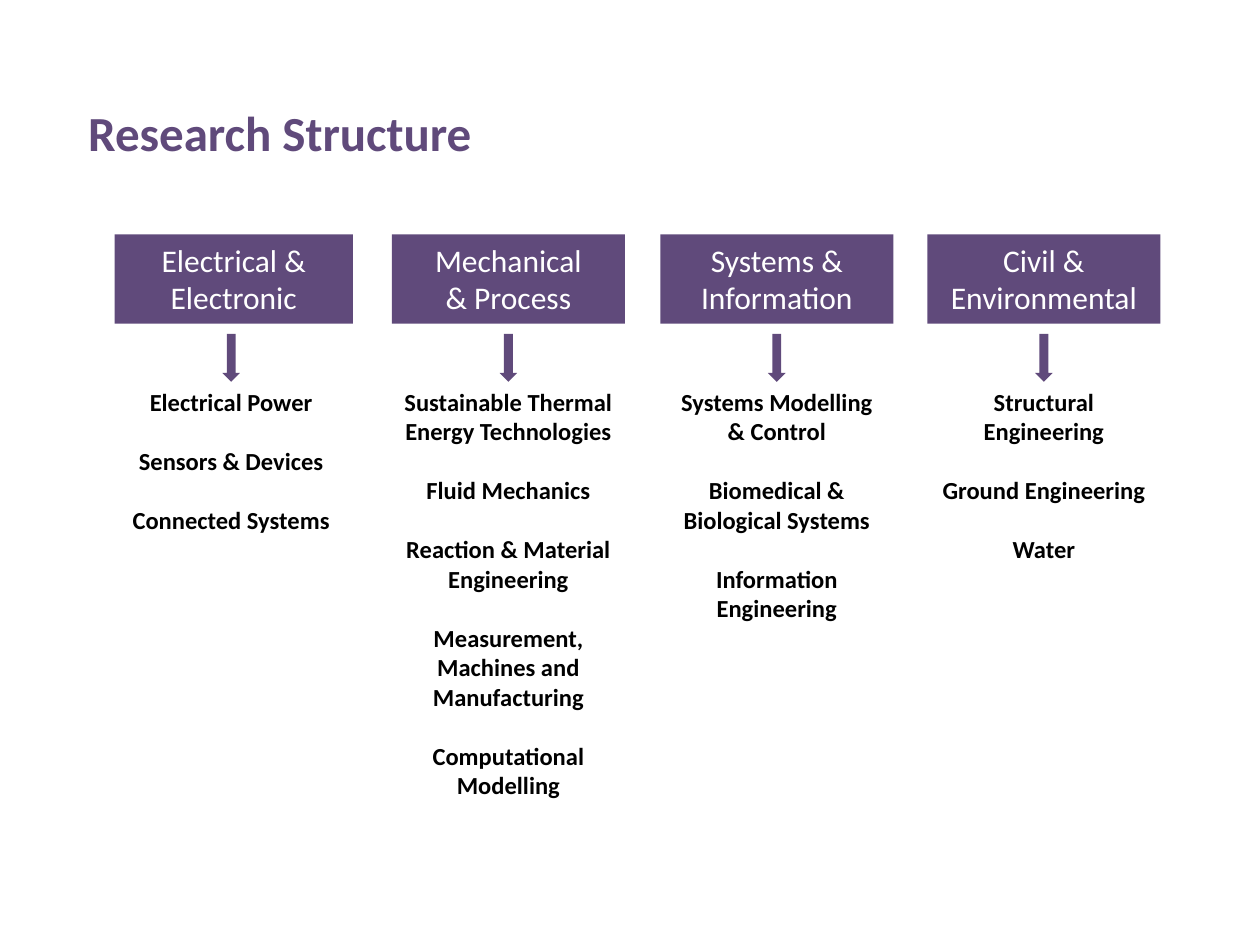
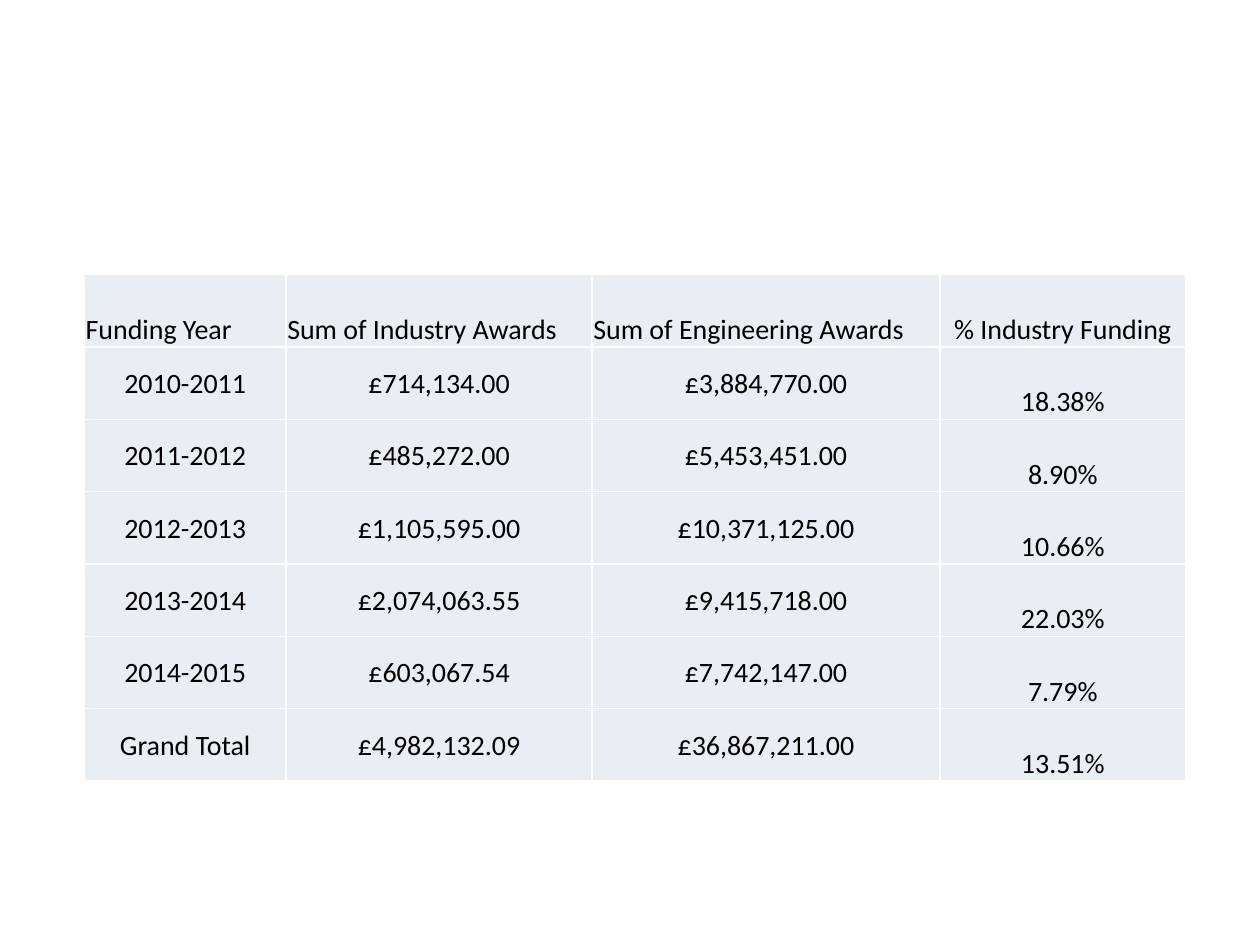
from lxml.etree import SubElement
from pptx import Presentation
from pptx.dml.color import RGBColor
from pptx.enum.shapes import MSO_SHAPE as Shape
from pptx.enum.text import MSO_ANCHOR as Anchor, MSO_AUTO_SIZE as AutoSize, PP_ALIGN as Align
from pptx.oxml.ns import qn
from pptx.util import Inches, Pt

FONT = "Calibri"
PURPLE, WHITE, BLACK, PALE = "604A7B", "FFFFFF", "000000", "E9EDF4"
TITLE_ONLY, BLANK = 5, 6

LIST_WIDTH = 1.85
ARROW_WIDTH = 0.14

# left, header width, header lines, topics
THEMES = [
    (0.91, 1.89, ["Electrical &", "Electronic"],
     ["Electrical Power", "Sensors & Devices", "Connected Systems"]),
    (3.11, 1.85, ["Mechanical", "& Process"],
     ["Sustainable Thermal Energy Technologies", "Fluid Mechanics",
      "Reaction & Material Engineering",
      "Measurement, Machines and Manufacturing", "Computational Modelling"]),
    (5.24, 1.85, ["Systems & Information"],
     ["Systems Modelling & Control", "Biomedical & Biological Systems",
      "Information Engineering"]),
    (7.36, 1.85, ["Civil & Environmental"],
     ["Structural Engineering", "Ground Engineering", "Water"]),
]

FUNDING = [
    ("Funding Year", "Sum of Industry Awards", "Sum of Engineering Awards", "% Industry Funding"),
    ("2010-2011", "£714,134.00", "£3,884,770.00", "18.38%"),
    ("2011-2012", "£485,272.00", "£5,453,451.00", "8.90%"),
    ("2012-2013", "£1,105,595.00", "£10,371,125.00", "10.66%"),
    ("2013-2014", "£2,074,063.55", "£9,415,718.00", "22.03%"),
    ("2014-2015", "£603,067.54", "£7,742,147.00", "7.79%"),
    ("Grand Total", "£4,982,132.09", "£36,867,211.00", "13.51%"),
]
FUNDING_WIDTHS = [1.6, 2.43, 2.76, 1.95]


def color(value):
    return RGBColor.from_string(value)


def inches(*lengths):
    return [Inches(length) for length in lengths]


def write(frame, lines, size, ink, bold=False, align=Align.CENTER, gap=0):
    """Write one paragraph per line, with gap points between paragraphs."""
    for index, line in enumerate(lines):
        para = frame.add_paragraph() if index else frame.paragraphs[0]
        para.alignment = align
        para.space_before = Pt(gap if index else 0)
        span = para.add_run()
        span.text = line
        span.font.name = FONT
        span.font.size = Pt(size)
        span.font.bold = bold
        span.font.color.rgb = color(ink)


def add_title(page, text):
    title = page.shapes.title
    title.left, title.top, title.width, title.height = inches(0.6, 0.76, 8.42, 0.57)
    frame = title.text_frame
    frame.auto_size = AutoSize.NONE
    frame.vertical_anchor = Anchor.TOP
    write(frame, [text], 28, PURPLE, bold=True, align=Align.LEFT)


def add_purple_shape(page, kind, *bounds):
    shape = page.shapes.add_shape(kind, *inches(*bounds))
    shape.shadow.inherit = False
    shape.fill.solid()
    shape.fill.fore_color.rgb = color(PURPLE)
    shape.line.fill.background()
    return shape


def add_theme(page, left, header_width, header_lines, topics):
    """Add a header, an arrow below it and the list of topics."""
    header = add_purple_shape(page, Shape.RECTANGLE, left, 1.86, header_width, 0.71)
    header.text_frame.word_wrap = True
    header.text_frame.vertical_anchor = Anchor.TOP
    write(header.text_frame, header_lines, 18, WHITE)

    arrow_left = left + (LIST_WIDTH - ARROW_WIDTH) / 2
    add_purple_shape(page, Shape.DOWN_ARROW, arrow_left, 2.65, ARROW_WIDTH, 0.38)

    box = page.shapes.add_textbox(*inches(left, 3.02, LIST_WIDTH, 0.3))
    box.text_frame.word_wrap = True
    box.text_frame.auto_size = AutoSize.SHAPE_TO_FIT_TEXT
    write(box.text_frame, topics, 14, BLACK, bold=True, gap=17)


def outline_cell(cell):
    properties = cell._tc.get_or_add_tcPr()
    for side in ("a:lnL", "a:lnR", "a:lnT", "a:lnB"):
        line = SubElement(properties, qn(side), w=str(Pt(1)))
        fill = SubElement(line, qn("a:solidFill"))
        SubElement(fill, qn("a:srgbClr"), val=WHITE)


def fill_cell(cell, text, anchor, align):
    outline_cell(cell)
    cell.fill.solid()
    cell.fill.fore_color.rgb = color(PALE)
    cell.margin_left = cell.margin_right = cell.margin_top = Inches(0.01)
    cell.margin_bottom = 0
    cell.vertical_anchor = anchor
    write(cell.text_frame, [text], 16, BLACK, align=align)


def add_funding_table(page):
    last = len(FUNDING_WIDTHS) - 1
    bounds = inches(0.67, 2.18, sum(FUNDING_WIDTHS), 4.02)
    table = page.shapes.add_table(len(FUNDING), last + 1, *bounds).table
    table.first_row = table.horz_banding = False
    for column, width in zip(table.columns, FUNDING_WIDTHS):
        column.width = Inches(width)
    for row, values in enumerate(FUNDING):
        for column, value in enumerate(values):
            anchor = Anchor.BOTTOM if row == 0 or column == last else Anchor.MIDDLE
            align = Align.LEFT if row == 0 and column < last else Align.CENTER
            fill_cell(table.cell(row, column), value, anchor, align)


def main():
    deck = Presentation()
    deck.slide_width, deck.slide_height = inches(10, 7.5)

    structure = deck.slides.add_slide(deck.slide_layouts[TITLE_ONLY])
    add_title(structure, "Research Structure")
    for theme in THEMES:
        add_theme(structure, *theme)

    funding = deck.slides.add_slide(deck.slide_layouts[BLANK])
    add_funding_table(funding)

    deck.save("out.pptx")


if __name__ == "__main__":
    main()
